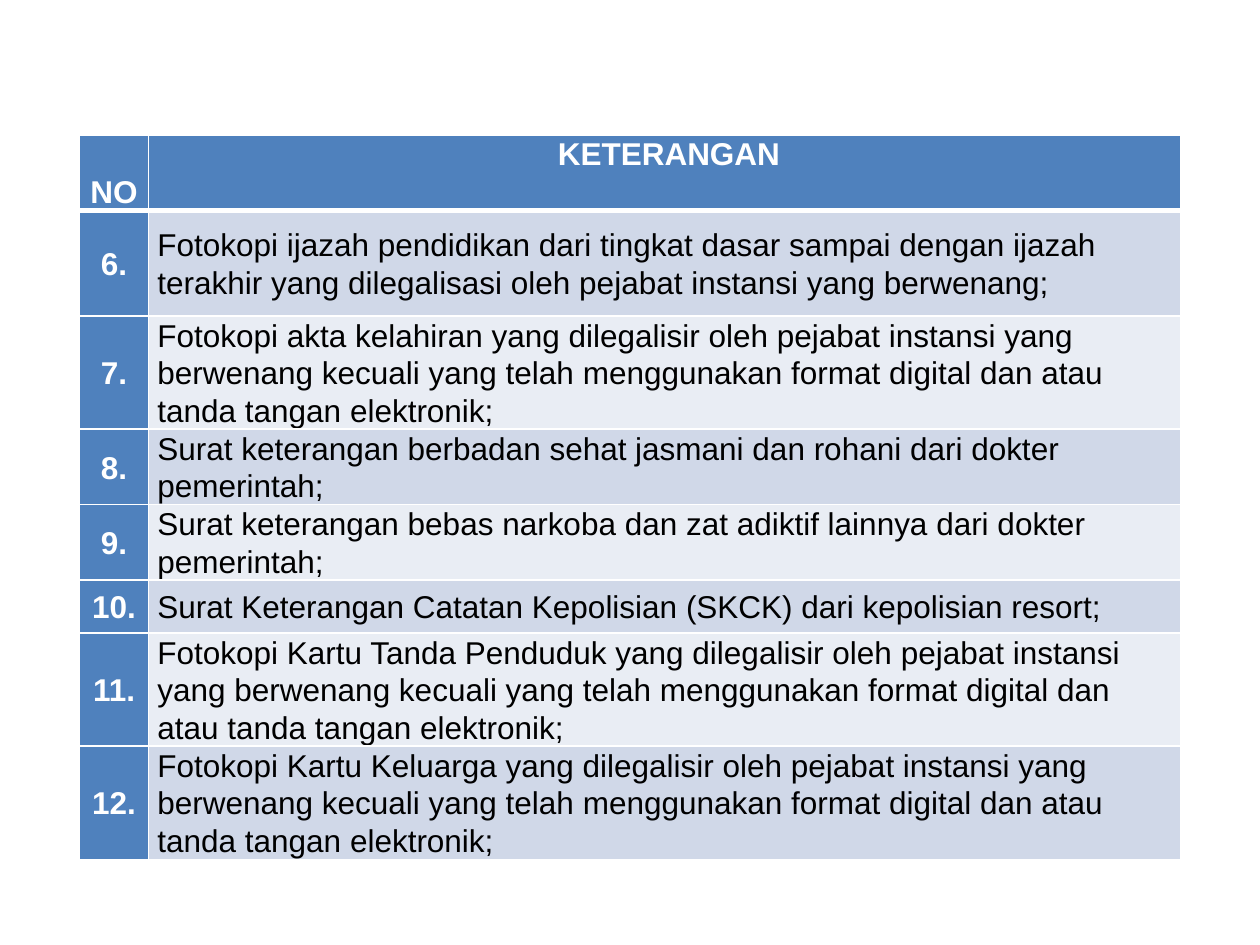
from dataclasses import dataclass

from lxml.etree import SubElement
from pptx import Presentation
from pptx.dml.color import RGBColor as Color
from pptx.enum.text import MSO_ANCHOR as Anchor, PP_ALIGN as Align
from pptx.oxml.ns import qn
from pptx.table import _Cell as Cell
from pptx.util import Pt


@dataclass(frozen=True)
class Theme:
    accent: str = "4F81BD"
    bands: tuple[str, str] = ("D0D8E8", "E9EDF4")
    light: str = "FFFFFF"
    dark: str = "000000"
    font: str = "Arial"
    size: float = 18
    line_spacing: float = 1.07
    space_after: float = 8
    side_margin: float = 5.04
    thin: float = 1
    thick: float = 3


@dataclass(frozen=True)
class Requirement:
    text: str
    height: float


THEME = Theme()
LEFT, TOP = 45.36, 77.04
COLUMN_WIDTHS = (39.6, 589.68)
SHORT, MEDIUM, TALL = 30.24, 60.48, 61.92
FIRST_NUMBER = 6
HEADINGS = (" NO", " KETERANGAN")
REQUIREMENTS = (
    Requirement("Fotokopi ijazah pendidikan dari tingkat dasar sampai dengan ijazah terakhir "
                "yang dilegalisasi oleh pejabat instansi yang berwenang;", MEDIUM),
    Requirement("Fotokopi akta kelahiran yang dilegalisir oleh pejabat instansi yang berwenang "
                "kecuali yang telah menggunakan format digital dan atau tanda tangan elektronik;", TALL),
    Requirement("Surat keterangan berbadan sehat jasmani dan rohani dari dokter pemerintah;", SHORT),
    Requirement("Surat keterangan bebas narkoba dan zat adiktif lainnya dari dokter pemerintah;", SHORT),
    Requirement("Surat Keterangan Catatan Kepolisian (SKCK) dari kepolisian resort;", SHORT),
    Requirement("Fotokopi Kartu Tanda Penduduk yang dilegalisir oleh pejabat instansi yang berwenang "
                "kecuali yang telah menggunakan format digital dan atau tanda tangan elektronik;", TALL),
    Requirement("Fotokopi Kartu Keluarga yang dilegalisir oleh pejabat instansi yang berwenang "
                "kecuali yang telah menggunakan format digital dan atau tanda tangan elektronik;", TALL),
)


def draw_borders(cell: Cell, top: float, bottom: float) -> None:
    properties = cell._tc.get_or_add_tcPr()
    widths = {"a:lnL": THEME.thin, "a:lnR": THEME.thin, "a:lnT": top, "a:lnB": bottom}
    for side, width in widths.items():
        line = SubElement(properties, qn(side), w=str(Pt(width)))
        fill = SubElement(line, qn("a:solidFill"))
        SubElement(fill, qn("a:srgbClr"), val=THEME.light)


def fill_cell(cell: Cell, text: str, fill: str, strong: bool = True,
              anchor: Anchor = Anchor.MIDDLE, top: float = THEME.thin,
              bottom: float = THEME.thin) -> None:
    draw_borders(cell, top, bottom)
    cell.fill.solid()
    cell.fill.fore_color.rgb = Color.from_string(fill)
    cell.margin_left = cell.margin_right = Pt(THEME.side_margin)
    cell.margin_top = cell.margin_bottom = Pt(0)
    cell.vertical_anchor = anchor
    para = cell.text_frame.paragraphs[0]
    para.text = text
    para.alignment = Align.CENTER if strong else Align.LEFT
    para.line_spacing = THEME.line_spacing
    para.space_after = Pt(THEME.space_after)
    para.font.name = THEME.font
    para.font.size = Pt(THEME.size)
    para.font.bold = strong
    para.font.color.rgb = Color.from_string(THEME.light if strong else THEME.dark)


def main() -> None:
    deck = Presentation()
    deck.slide_width, deck.slide_height = Pt(720), Pt(540)
    page = deck.slides.add_slide(deck.slide_layouts[6])
    heights = (SHORT, *(item.height for item in REQUIREMENTS))
    table = page.shapes.add_table(len(heights), len(COLUMN_WIDTHS), Pt(LEFT), Pt(TOP),
                                  Pt(sum(COLUMN_WIDTHS)), Pt(sum(heights))).table
    for column, width in zip(table.columns, COLUMN_WIDTHS):
        column.width = Pt(width)
    for row, height in zip(table.rows, heights):
        row.height = Pt(height)

    for column, (heading, anchor) in enumerate(zip(HEADINGS, (Anchor.MIDDLE, Anchor.TOP))):
        fill_cell(table.cell(0, column), heading, THEME.accent, anchor=anchor, bottom=THEME.thick)
    for index, item in enumerate(REQUIREMENTS):
        top = THEME.thin if index else THEME.thick
        band = THEME.bands[index % 2]
        fill_cell(table.cell(index + 1, 0), f"{FIRST_NUMBER + index}.", THEME.accent, top=top)
        fill_cell(table.cell(index + 1, 1), item.text, band, strong=False, top=top)

    deck.save("out.pptx")


if __name__ == "__main__":
    main()
